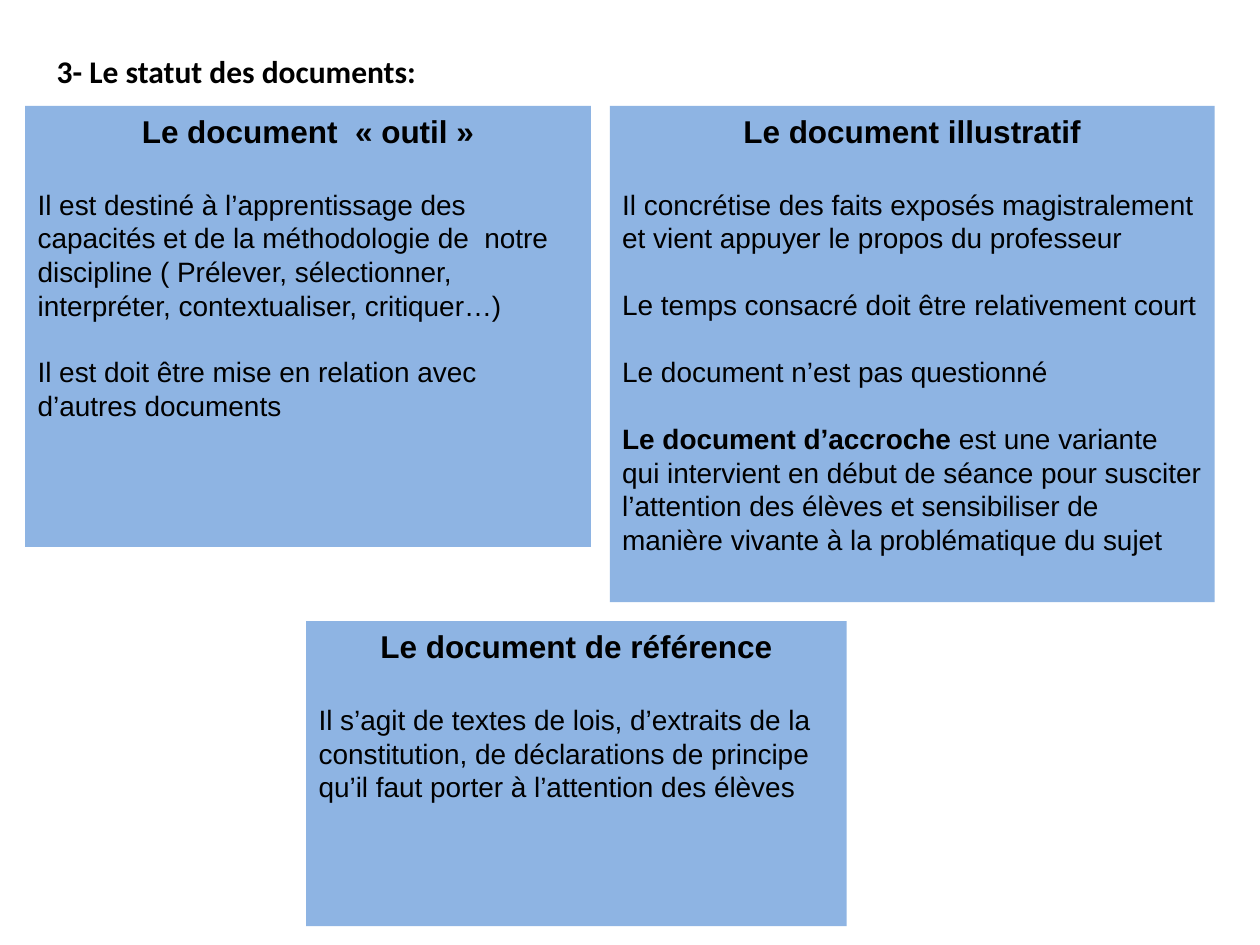
from dataclasses import dataclass

from pptx import Presentation
from pptx.dml.color import RGBColor
from pptx.enum.shapes import MSO_SHAPE
from pptx.enum.text import MSO_ANCHOR, PP_ALIGN
from pptx.slide import Slide
from pptx.text.text import TextFrame
from pptx.util import Inches, Pt


@dataclass(frozen=True)
class Theme:
    box: RGBColor = RGBColor(0x8E, 0xB4, 0xE3)
    text: RGBColor = RGBColor(0, 0, 0)
    title_font: str = "Calibri"
    font: str = "Arial"
    heading_size: int = 18
    body_size: int = 16
    heading_gap: float = 21.5
    body_gap: float = 19


@dataclass(frozen=True)
class Card:
    left: float
    top: float
    width: float
    height: float
    heading: str
    paragraphs: tuple[str, ...]
    lead: str = ""  # bold opening words of the last paragraph


THEME = Theme()
TOP_ROW = 0.84

CARDS = (
    Card(4.84, TOP_ROW, 4.8, 3.94, "Le document illustratif", (
        "Il concrétise des faits exposés magistralement et vient appuyer "
        "le propos du professeur",
        "Le temps consacré doit être relativement court",
        "Le document n’est pas questionné",
        "est une variante qui intervient en début de séance pour susciter "
        "l’attention des élèves et sensibiliser de manière vivante à la "
        "problématique du sujet",
    ), lead="Le document d’accroche "),
    Card(0.2, TOP_ROW, 4.49, 3.5, "Le document  « outil »", (
        "Il est destiné à l’apprentissage des  capacités et de la "
        "méthodologie de  notre discipline ( Prélever, sélectionner, "
        "interpréter, contextualiser, critiquer…)",
        "Il est doit être mise en relation avec d’autres documents",
    )),
    Card(2.43, 4.93, 4.29, 2.42, "Le document de référence", (
        "Il s’agit de textes de lois, d’extraits de la constitution, de "
        "déclarations de principe qu’il faut porter à l’attention des élèves",
    )),
)


def write(tf: TextFrame, text: str, *, lead: str = "", font: str = THEME.font,
          size: float = THEME.body_size, bold: bool = False,
          align: PP_ALIGN = PP_ALIGN.LEFT, gap: float = 0) -> None:
    """Write a paragraph, using the first one while the frame is empty."""
    p = tf.add_paragraph() if tf.text else tf.paragraphs[0]
    p.alignment = align
    p.space_before = Pt(gap)
    for part, is_bold in ((lead, True), (text, bold)):
        if part:
            r = p.add_run()
            r.text = part
            r.font.name = font
            r.font.size = Pt(size)
            r.font.bold = is_bold
            r.font.color.rgb = THEME.text


def add_title(slide: Slide, text: str) -> None:
    sp = slide.shapes.title
    sp.left, sp.top = Inches(0.35), Inches(0.36)
    sp.width, sp.height = Inches(4.33), Inches(0.4)
    tf = sp.text_frame
    tf.word_wrap = True
    tf.vertical_anchor = MSO_ANCHOR.TOP
    write(tf, text, font=THEME.title_font, size=THEME.heading_size, bold=True)


def add_card(slide: Slide, card: Card) -> None:
    sp = slide.shapes.add_shape(
        MSO_SHAPE.RECTANGLE, Inches(card.left), Inches(card.top),
        Inches(card.width), Inches(card.height))
    sp.shadow.inherit = False
    sp.fill.solid()
    sp.fill.fore_color.rgb = THEME.box
    sp.line.fill.background()
    tf = sp.text_frame
    tf.word_wrap = True
    tf.vertical_anchor = MSO_ANCHOR.TOP
    write(tf, card.heading, size=THEME.heading_size, bold=True,
          align=PP_ALIGN.CENTER)
    last = len(card.paragraphs) - 1
    for i, text in enumerate(card.paragraphs):
        write(tf, text, lead=card.lead if i == last else "",
              gap=THEME.body_gap if i else THEME.heading_gap)


def main() -> None:
    prs = Presentation()
    prs.slide_width, prs.slide_height = Inches(10), Inches(7.5)
    slide = prs.slides.add_slide(prs.slide_layouts.get_by_name("Title Only"))
    for card in CARDS:
        add_card(slide, card)
    add_title(slide, "3- Le statut des documents:")
    prs.save("out.pptx")


if __name__ == "__main__":
    main()
